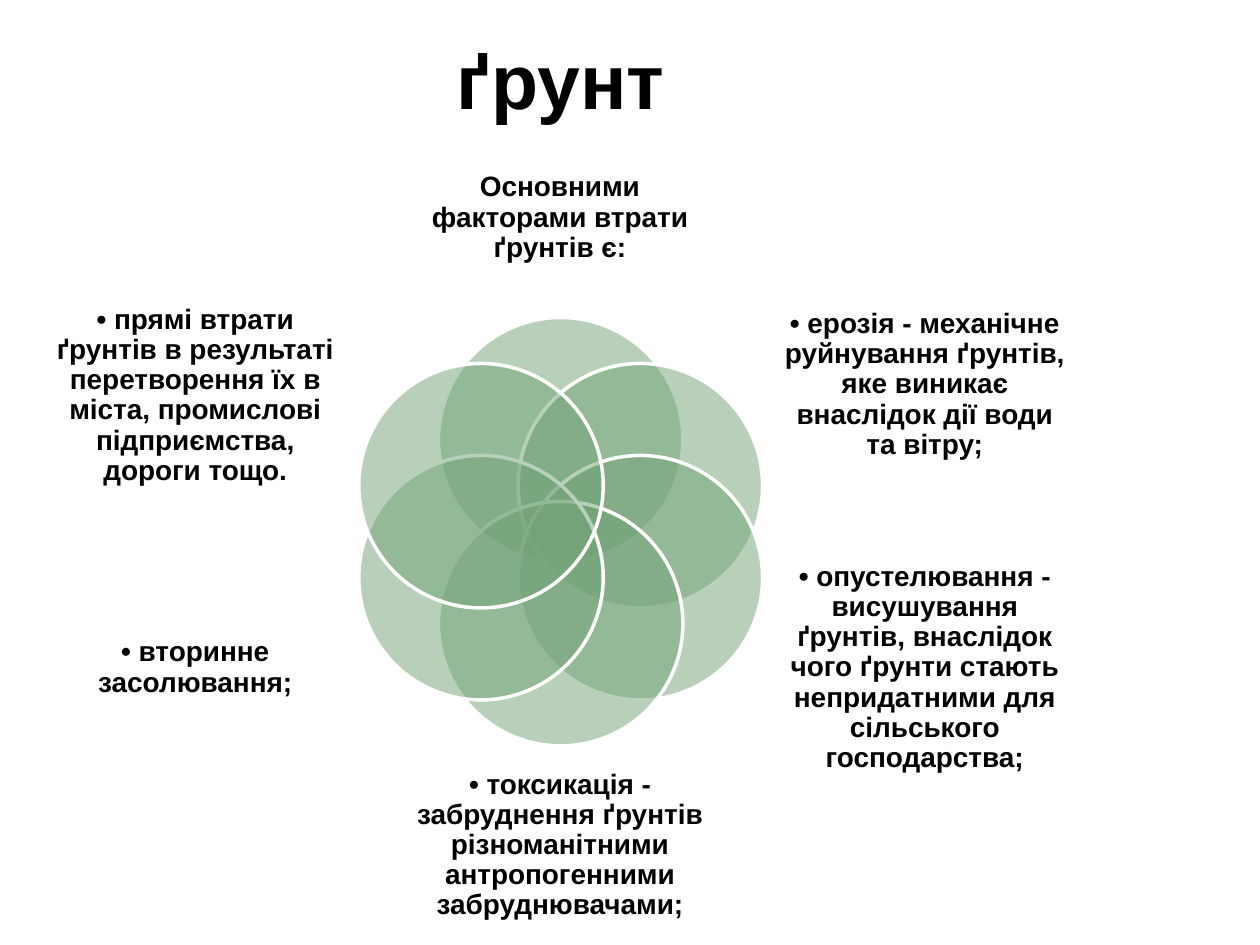
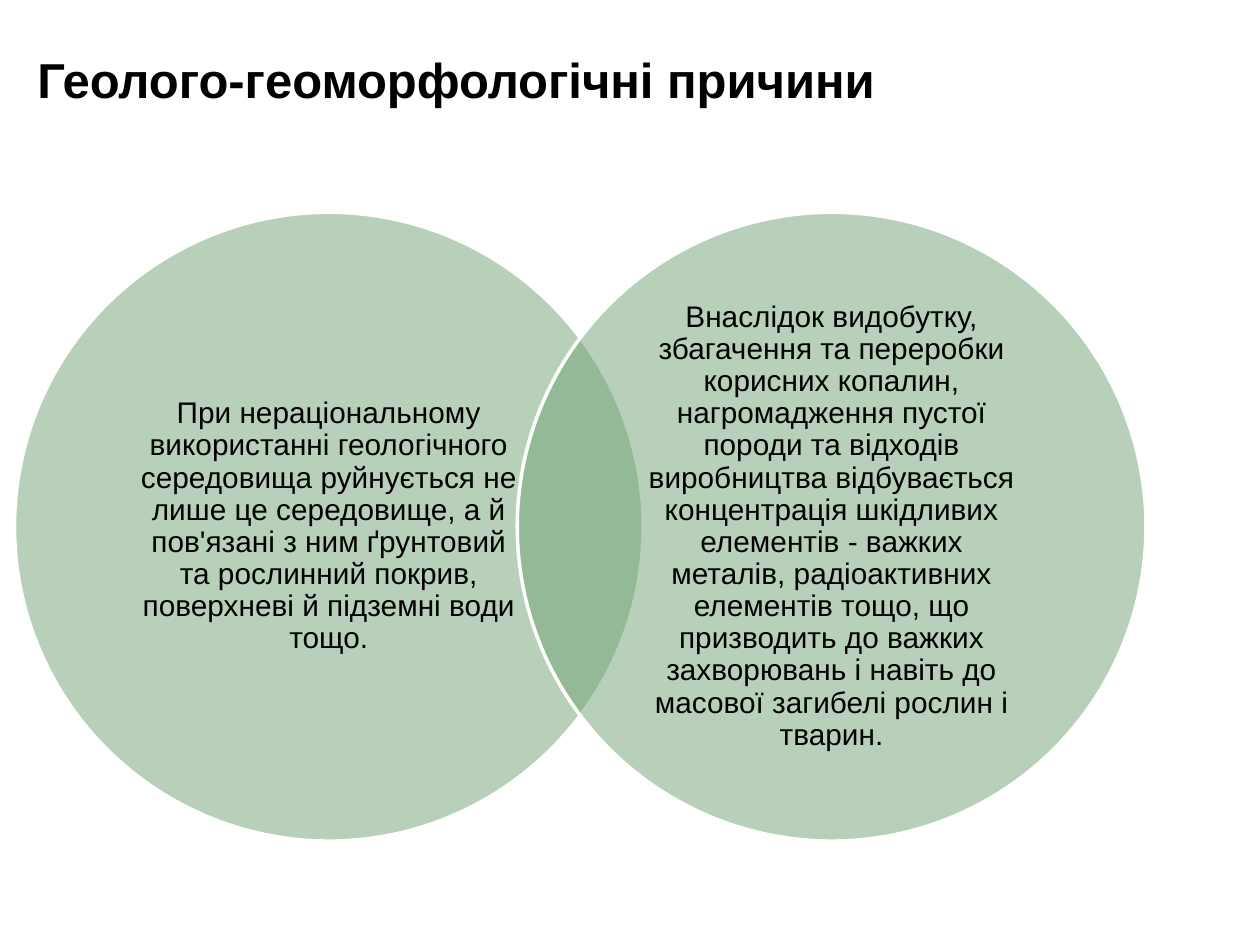
from dataclasses import dataclass
from math import cos, radians, sin

from lxml.etree import SubElement
from pptx import Presentation
from pptx.dml.color import RGBColor
from pptx.enum.shapes import MSO_SHAPE
from pptx.enum.text import MSO_ANCHOR, MSO_AUTO_SIZE, PP_ALIGN
from pptx.oxml.ns import qn
from pptx.util import Inches, Pt

# Shared style
FONT = "Arial"
GREEN, WHITE, BLACK = "72A376", "FFFFFF", "000000"
ALPHA = 50


@dataclass
class Box:
    left: float
    top: float
    width: float
    height: float

    def place(self) -> list:
        return [Inches(v) for v in (self.left, self.top, self.width, self.height)]


@dataclass
class Label:
    text: str
    box: Box
    size: int
    bold: bool = False
    pad: tuple = (0, 0)


def color(code: str) -> RGBColor:
    return RGBColor.from_string(code)


def write(frame, text: str, size: int, bold: bool):
    """Set one centred paragraph and return it."""
    frame.text = text
    frame.word_wrap = True
    frame.auto_size = MSO_AUTO_SIZE.NONE
    frame.vertical_anchor = MSO_ANCHOR.MIDDLE
    para = frame.paragraphs[0]
    para.alignment = PP_ALIGN.CENTER
    font = para.runs[0].font
    font.name, font.size, font.bold = FONT, Pt(size), bold
    font.color.rgb = color(BLACK)
    return para


def start(deck, text: str, box: Box, size: int):
    """Add a slide with its title and return the group for its diagram."""
    slide = deck.slides.add_slide(deck.slide_layouts[5])
    title = slide.shapes.title
    title.left, title.top, title.width, title.height = box.place()
    write(title.text_frame, text, size, True)
    return slide.shapes.add_group_shape().shapes


def circle(shapes, x: float, y: float, size: float) -> None:
    """Draw a translucent circle centred on x, y."""
    box = Box(x - size / 2, y - size / 2, size, size)
    disc = shapes.add_shape(MSO_SHAPE.OVAL, *box.place())
    disc.shadow.inherit = False
    disc.fill.solid()
    disc.fill.fore_color.rgb = color(GREEN)
    tint = disc.fill._xPr.find(f".//{qn('a:srgbClr')}")
    SubElement(tint, qn("a:alpha"), val=str(ALPHA * 1000))
    disc.line.color.rgb = color(WHITE)
    disc.line.width = Pt(2)


def label(shapes, item: Label) -> None:
    frame = shapes.add_textbox(*item.box.place()).text_frame
    para = write(frame, item.text, item.size, item.bold)
    para.line_spacing = 0.9
    para.space_after = Pt(round(item.size * 0.35, 1))
    side, edge = item.pad
    frame.margin_left = frame.margin_right = Inches(side)
    frame.margin_top = frame.margin_bottom = Inches(edge)


def soil(deck) -> None:
    """Ring of six circles, each with a label outside it."""
    shapes = start(deck, "ґрунт", Box(-0.05, 0, 9, 1.25), 44)
    mid_x, mid_y, ring, size = 4.45, 4.22, 0.73, 1.94
    near, far, wide = 0.4, 6.19, 2.3
    # Clockwise from the top
    items = [
        ("Основними факторами втрати ґрунтів є:",
         Box(3.23, 1.07, 2.43, 1.32)),
        ("• ерозія - механічне руйнування ґрунтів, яке виникає внаслідок "
         "дії води та вітру;", Box(far, 2.33, wide, 1.45)),
        ("• опустелювання - висушування ґрунтів, внаслідок чого ґрунти стають "
         "непридатними для сільського господарства;",
         Box(far, 4.49, wide, 1.62)),
        ("• токсикація - забруднення ґрунтів різноманітними антропогенними "
         "забруднювачами;", Box(3.23, 6.05, 2.43, 1.32)),
        ("• вторинне засолювання;", Box(near, 4.49, wide, 1.62)),
        ("• прямі втрати ґрунтів в результаті перетворення їх в міста, "
         "промислові підприємства, дороги тощо.",
         Box(near, 2.33, wide, 1.62)),
    ]
    for i, (text, box) in enumerate(items):
        turn = radians(i * 360 / len(items))
        circle(shapes, mid_x + ring * sin(turn), mid_y - ring * cos(turn), size)
        label(shapes, Label(text, box, 16, bold=True))


def causes(deck) -> None:
    """Two overlapping circles with the text inside."""
    shapes = start(deck, "Геолого-геоморфологічні причини",
                   Box(0.08, 0, 7.08, 1.25), 28)
    first, step, mid_y, size, side = 2.61, 3.99, 4.18, 4.99, 3.53
    texts = [
        "При нераціональному використанні геологічного середовища руйнується "
        "не лише це середовище, а й пов'язані з ним ґрунтовий та рослинний "
        "покрив, поверхневі й підземні води тощо.",
        "Внаслідок видобутку, збагачення та переробки корисних копалин, "
        "нагромадження пустої породи та відходів виробництва відбувається "
        "концентрація шкідливих елементів - важких металів, радіоактивних "
        "елементів тощо, що призводить до важких захворювань і навіть до "
        "масової загибелі рослин і тварин.",
    ]
    for i, text in enumerate(texts):
        x = first + i * step
        circle(shapes, x, mid_y, size)
        box = Box(x - side / 2, mid_y - side / 2, side, side)
        label(shapes, Label(text, box, 17, pad=(0.27, 0.02)))


def main() -> None:
    deck = Presentation()
    deck.slide_width, deck.slide_height = Inches(10), Inches(7.5)
    soil(deck)
    causes(deck)
    deck.save("out.pptx")


if __name__ == "__main__":
    main()
